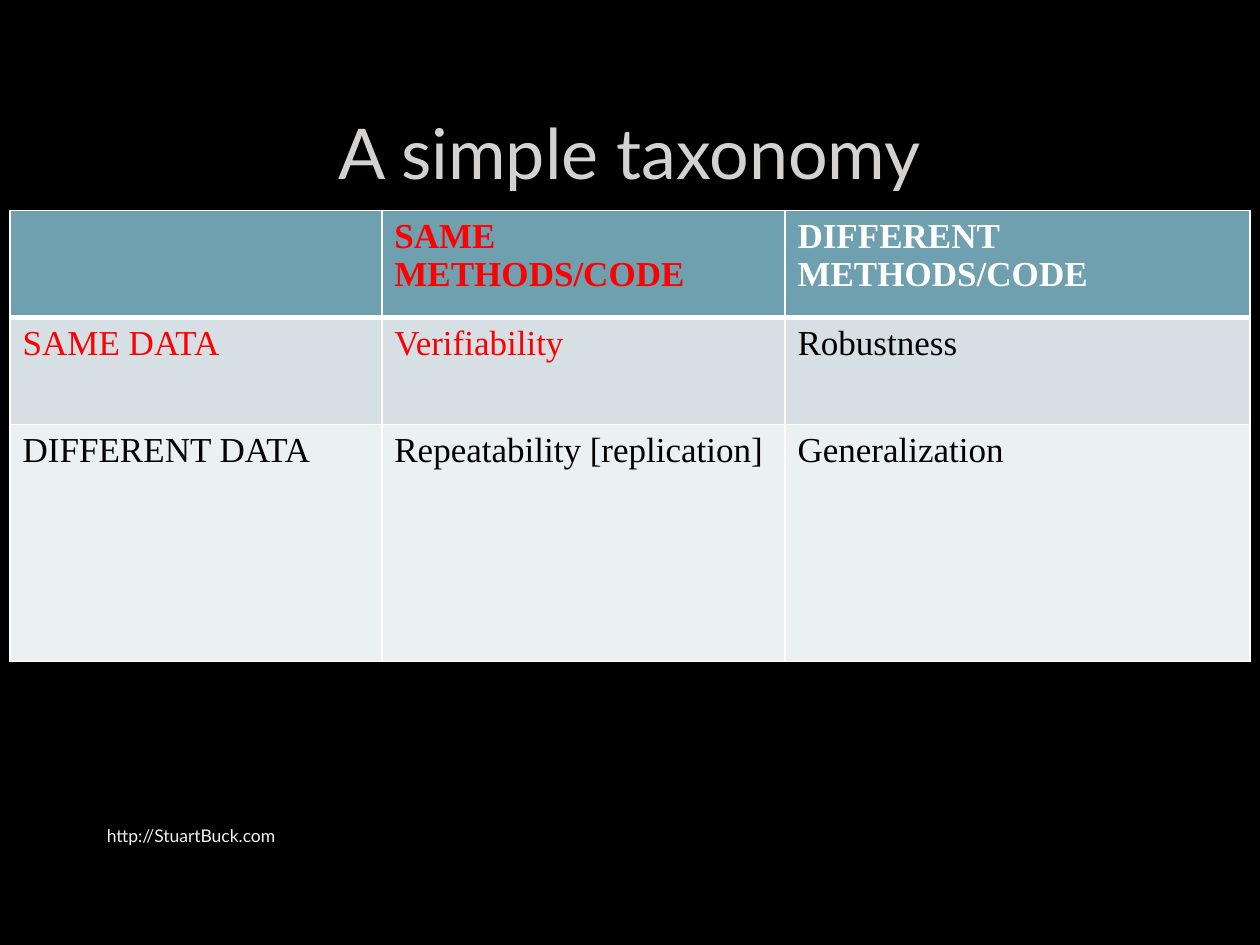
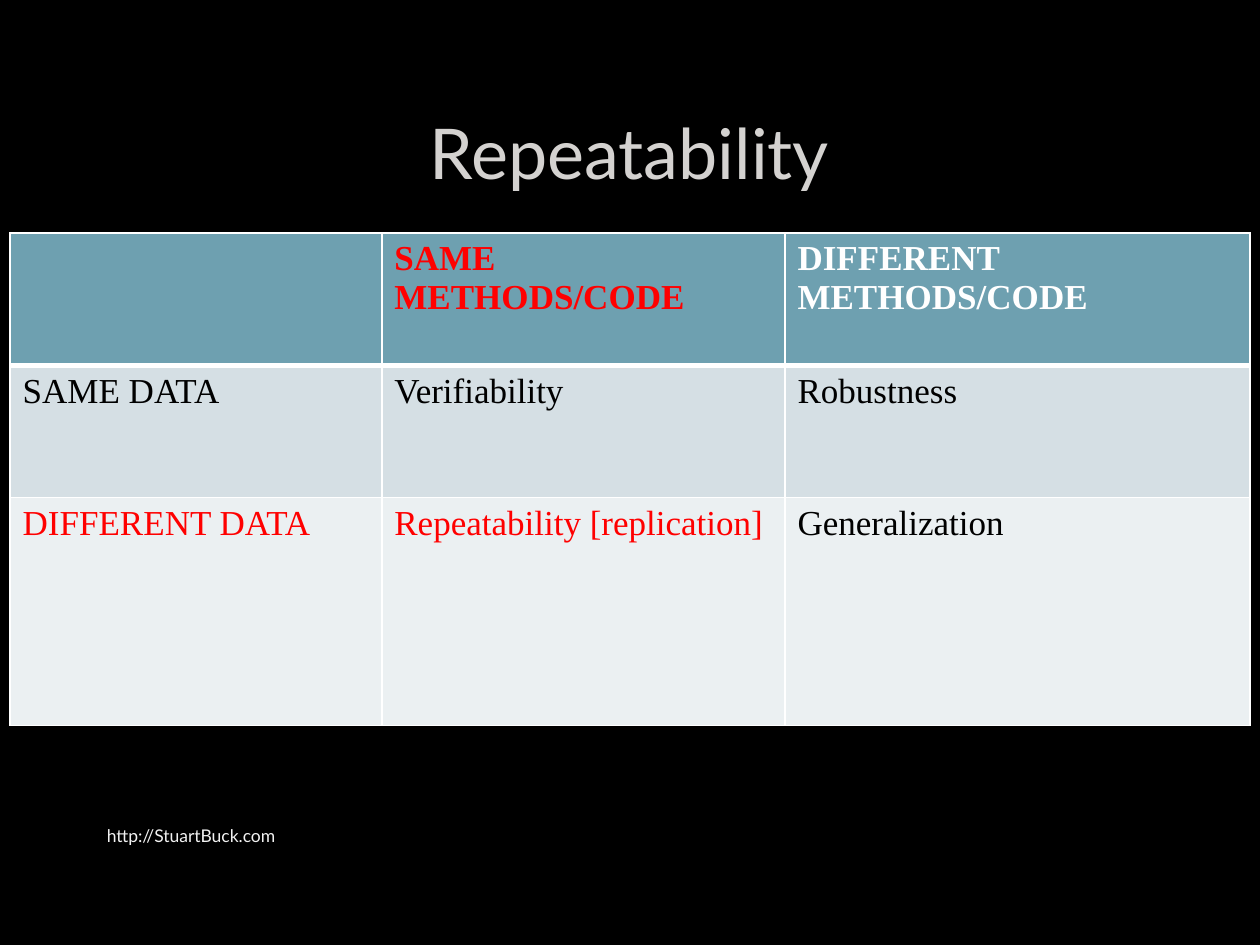
import lxml.etree
import pptx
import pptx.dml.color
import pptx.enum.text
import pptx.oxml.ns
import pptx.util

Inches = pptx.util.Inches
Pt = pptx.util.Pt
RGBColor = pptx.dml.color.RGBColor
ALIGN = pptx.enum.text.PP_ALIGN
ANCHOR = pptx.enum.text.MSO_ANCHOR

BLACK = RGBColor(0x00, 0x00, 0x00)
WHITE = RGBColor(0xFF, 0xFF, 0xFF)
RED = RGBColor(0xFF, 0x00, 0x00)
TITLE_GREY = RGBColor(0xD4, 0xD2, 0xD0)
FOOTER_GREY = RGBColor(0xF2, 0xF2, 0xF2)
HEADER_TEAL = RGBColor(0x6E, 0xA0, 0xB0)
ROW_FILLS = [HEADER_TEAL, RGBColor(0xD5, 0xDF, 0xE4), RGBColor(0xEB, 0xF0, 0xF2)]

SANS = "Lato"
SERIF = "Times New Roman"
FOOTER = "http://StuartBuck.com"
COLUMN_WIDTHS = [2.95, 3.2, 3.69]
TAXONOMY = [
    ["", "SAME METHODS/CODE", "DIFFERENT METHODS/CODE"],
    ["SAME DATA", "Verifiability", "Robustness"],
    ["DIFFERENT DATA", "Repeatability [replication]", "Generalization"],
]


class TaxonomyDeck:
    """Builds dark slides that each highlight one path through the taxonomy."""

    def __init__(self):
        self.presentation = pptx.Presentation()
        self.presentation.slide_width = Inches(10)
        self.presentation.slide_height = Inches(7.5)
        self.slide = None

    def add_slide(self, title):
        self.slide = self.presentation.slides.add_slide(self.presentation.slide_layouts[6])
        background = self.slide.background.fill
        background.solid()
        background.fore_color.rgb = BLACK
        self.add_text(title, (0.75, 0.67, 8.49, 1.06), 40, TITLE_GREY, ALIGN.CENTER)
        self.add_text(FOOTER, (0.75, 6.43, 5.47, 0.4), 10, FOOTER_GREY, ALIGN.LEFT)

    def style_paragraph(self, paragraph, name, size, color, bold=False):
        paragraph.font.name = name
        paragraph.font.size = Pt(size)
        paragraph.font.color.rgb = color
        paragraph.font.bold = bold

    def add_text(self, text, box, size, color, alignment):
        shape = self.slide.shapes.add_textbox(*map(Inches, box))
        frame = shape.text_frame
        frame.word_wrap = True
        frame.vertical_anchor = ANCHOR.MIDDLE
        paragraph = frame.paragraphs[0]
        paragraph.text = text
        paragraph.alignment = alignment
        self.style_paragraph(paragraph, SANS, size, color)

    def add_borders(self, cell, top, bottom):
        properties = cell._tc.get_or_add_tcPr()
        qualify = pptx.oxml.ns.qn
        for side, width in (("L", 1), ("R", 1), ("T", top), ("B", bottom)):
            line = lxml.etree.SubElement(properties, qualify(f"a:ln{side}"), w=str(Pt(width)))
            fill = lxml.etree.SubElement(line, qualify("a:solidFill"))
            lxml.etree.SubElement(fill, qualify("a:srgbClr"), val=str(WHITE))

    def add_taxonomy(self, top, row_heights, focus_row):
        shape = self.slide.shapes.add_table(
            len(TAXONOMY), len(COLUMN_WIDTHS), Inches(0.08), Inches(top),
            Inches(sum(COLUMN_WIDTHS)), Inches(sum(row_heights)))
        table = shape.table
        table.horz_banding = False
        for column, width in zip(table.columns, COLUMN_WIDTHS):
            column.width = Inches(width)
        for row, height in zip(table.rows, row_heights):
            row.height = Inches(height)
        highlighted = {(0, 1), (focus_row, 0), (focus_row, 1)}
        for row, texts in enumerate(TAXONOMY):
            for column, text in enumerate(texts):
                cell = table.cell(row, column)
                self.add_borders(cell, 3 if row == 1 else 1, 3 if row == 0 else 1)
                cell.fill.solid()
                cell.fill.fore_color.rgb = ROW_FILLS[row]
                color = WHITE if row == 0 else BLACK
                if (row, column) in highlighted:
                    color = RED
                paragraph = cell.text_frame.paragraphs[0]
                paragraph.text = text
                self.style_paragraph(paragraph, SERIF, 20, color, bold=row == 0)


def main():
    deck = TaxonomyDeck()
    deck.add_slide("A simple taxonomy")
    deck.add_taxonomy(1.67, [0.85, 0.85, 1.88], focus_row=1)
    deck.add_slide("Repeatability")
    deck.add_taxonomy(1.85, [1.05, 1.05, 1.81], focus_row=2)
    deck.presentation.save("out.pptx")


if __name__ == "__main__":
    main()
